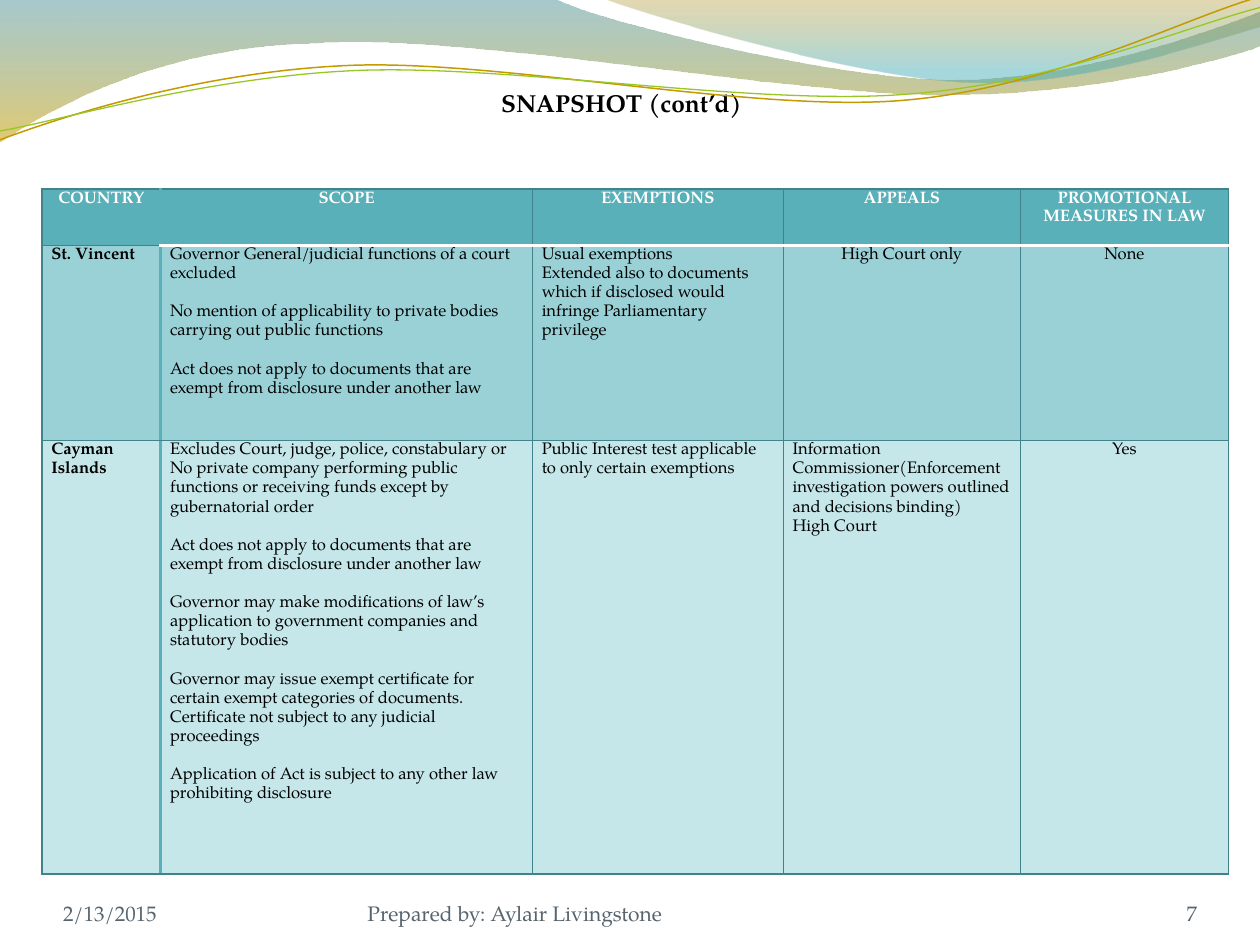
from lxml.etree import SubElement
from pptx import Presentation
from pptx.dml.color import RGBColor
from pptx.enum.text import MSO_ANCHOR, MSO_AUTO_SIZE, PP_ALIGN
from pptx.oxml.ns import qn
from pptx.util import Inches, Pt

COLORS = {
    "text": "000000", "white": "FFFFFF", "footer": "57646E",
    "border": "41838A", "header": "59B0B9", "dark row": "9AD1D7", "light row": "C5E7EA",
    "teal": "3B8890", "gold": "C99E00", "olive": "A48100", "aqua": "3EA9B4",
    "gold line": "C49A00", "green line": "98C723",
}
LEFT, CENTER, RIGHT = PP_ALIGN.LEFT, PP_ALIGN.CENTER, PP_ALIGN.RIGHT

deck = Presentation()
deck.slide_width, deck.slide_height = Inches(10), Inches(7.5)
slide = deck.slides.add_slide(deck.slide_layouts[5])
UNIT = deck.slide_width / 120  # square grid: 120 columns by 90 rows


def write(frame, lines, color, align, font_format, paragraph_format):
    frame.word_wrap = True
    for index, line in enumerate(lines):
        paragraph = frame.paragraphs[0] if index == 0 else frame.add_paragraph()
        paragraph.alignment = align
        for name, value in paragraph_format.items():
            # The first paragraph starts at the top, without a gap
            setattr(paragraph, name, Pt(0) if name == "space_before" and index == 0 else value)
        run = paragraph.add_run()
        run.text = line
        run.font.name = "TeX Gyre Pagella"
        run.font.color.rgb = RGBColor.from_string(COLORS[color])
        for name, value in font_format.items():
            setattr(run.font, name, value)


def trace(start, segments, close):
    """Outline in inches: two numbers are a line, six a cubic Bézier curve."""
    points = [pair for s in segments for pair in zip(s[::2], s[1::2])]
    builder = slide.shapes.build_freeform(*[round(v * 1000) for v in start], scale=914.4)
    builder.add_line_segments([(round(x * 1000), round(y * 1000)) for x, y in points], close)
    outline = builder.convert_to_shape()
    outline.shadow.inherit = False
    # Join the three points of each curve into one curve command
    steps = iter(list(outline.element.iter(qn("a:lnTo"))))
    for segment in segments:
        first = next(steps)
        if len(segment) == 6:
            first.tag = qn("a:cubicBezTo")
            for _ in range(2):
                step = next(steps)
                first.append(step[0])
                step.getparent().remove(step)
    return outline


# Translucent waves: start, segments, gradient stops (position, colour, opacity %)
waves = [
    ((0, 0), [(4.4, -0.01), (4.76, 0.17, 6.64, 0.63, 7.58, 0.63),
              (8.53, 0.63, 9.58, 0.26, 10, 0.09), (10.01, 0.36),
              (9.83, 0.44, 8.7, 0.76, 7.46, 0.75), (6.22, 0.75, 3.82, 0.28, 2.57, 0.34),
              (1.29, 0.36, 0.46, 0.83, -0.01, 1.13)],
     [(0, "teal", 45), (1, "gold", 55)]),
    ((4.79, -0.01), [(5.09, 0.11, 6.82, 0.62, 7.69, 0.65),
                     (8.56, 0.69, 9.61, 0.32, 10, 0.21), (10, 0)],
     [(0, "olive", 30), (0.8, "aqua", 45)]),
]
for start, segments, stops in waves:
    wave = trace(start, segments, True)
    wave.line.fill.background()
    wave.fill.gradient()
    wave.fill.gradient_angle = 270
    for stop, (position, color, _) in zip(wave.fill.gradient_stops, stops):
        stop.position = position
        stop.color.rgb = RGBColor.from_string(COLORS[color])
    for tint, (_, _, opacity) in zip(wave.element.iter(qn("a:srgbClr")), stops):
        SubElement(tint, qn("a:alpha"), val=str(opacity * 1000))

# Thin lines over the waves
strands = [
    ("gold line", 0.85, (0, 1.11), [(0.48, 0.93, 1.58, 0.57, 2.77, 0.52),
                                    (3.95, 0.47, 5.93, 0.89, 7.13, 0.8),
                                    (8.33, 0.71, 9.38, 0.15, 9.98, -0.02)]),
    ("green line", 0.75, (0, 1.04), [(0.47, 0.96, 1.64, 0.61, 2.83, 0.56),
                                     (4.03, 0.51, 5.97, 0.84, 7.17, 0.75),
                                     (8.36, 0.67, 9.41, 0.21, 10, 0.06)]),
]
for color, weight, start, segments in strands:
    strand = trace(start, segments, False)
    strand.fill.background()
    strand.line.color.rgb = RGBColor.from_string(COLORS[color])
    strand.line.width = Pt(weight)

# Title
heading = slide.shapes.title
for name, value in {"left": 4.7, "top": 7.8, "width": 109, "height": 6}.items():
    setattr(heading, name, round(value * UNIT))
for name, value in {"margin_left": 0, "margin_right": 0, "margin_top": Inches(0.05),
                    "margin_bottom": 0, "vertical_anchor": MSO_ANCHOR.TOP,
                    "auto_size": MSO_AUTO_SIZE.NONE}.items():
    setattr(heading.text_frame, name, value)
write(heading.text_frame, ["SNAPSHOT (cont’d)"], "text", CENTER,
      {"size": Pt(14), "bold": True}, {"space_before": Pt(0)})

# Footer: date, author, page number
for left, width, wording, align in [(6, 28, "2/13/2015", LEFT),
                                    (35, 44, "Prepared by: Aylair Livingstone", LEFT),
                                    (104, 10, "7", RIGHT)]:
    footer = slide.shapes.add_textbox(*[round(v * UNIT) for v in (left, 83.4, width, 4.8)])
    for name, value in {"margin_left": 0, "margin_right": 0, "margin_top": 0,
                        "margin_bottom": 0, "vertical_anchor": MSO_ANCHOR.BOTTOM}.items():
        setattr(footer.text_frame, name, value)
    write(footer.text_frame, [wording], "footer", align, {"size": Pt(12)}, {})

# Country table: each cell is a list of paragraphs
other_law = "Act does not apply to documents that are exempt from disclosure under another law"
countries = [
    [["COUNTRY"], ["SCOPE"], ["EXEMPTIONS"], ["APPEALS"], ["PROMOTIONAL MEASURES IN LAW"]],
    [["St. Vincent"],
     ["Governor General/judicial functions of a court excluded",
      "No mention of applicability to private bodies carrying out public functions",
      other_law],
     ["Usual exemptions",
      "Extended also to documents which if disclosed would infringe Parliamentary privilege"],
     ["High Court only"],
     ["None"]],
    [["Cayman Islands"],
     ["Excludes Court, judge, police, constabulary or No private company performing public "
      "functions or receiving funds except by gubernatorial order",
      other_law,
      "Governor may make modifications of law’s application to government companies and "
      "statutory bodies",
      "Governor may issue exempt certificate for certain exempt categories of documents. "
      "Certificate not subject to any judicial proceedings",
      "Application of Act is subject to any other law prohibiting disclosure"],
     ["Public Interest test applicable to only certain exemptions"],
     ["Information Commissioner(Enforcement investigation powers outlined and decisions binding)",
      "High Court"],
     ["Yes"]],
]
column_widths = [11.3, 35.4, 23.9, 22.6, 19.8]
row_heights = [5.35, 18.6, 41.3]
row_fills = ["header", "dark row", "light row"]
snapshot = slide.shapes.add_table(
    len(row_heights), len(column_widths),
    *[round(v * UNIT) for v in (4, 18, sum(column_widths), sum(row_heights))]).table
snapshot.first_row = snapshot.horz_banding = False
for column, width in zip(snapshot.columns, column_widths):
    column.width = round(width * UNIT)
for row, height in zip(snapshot.rows, row_heights):
    row.height = round(height * UNIT)

for r, country in enumerate(countries):
    for c, lines in enumerate(country):
        cell = snapshot.cell(r, c)
        for name, value in {"margin_left": Pt(5.4), "margin_right": Pt(5.4),
                            "margin_top": 0, "margin_bottom": 0,
                            "vertical_anchor": MSO_ANCHOR.TOP}.items():
            setattr(cell, name, value)
        centered = r == 0 or (c > 2 and len(lines) == 1)
        write(cell.text_frame, lines, "white" if r == 0 else "text",
              CENTER if centered else LEFT,
              {"size": Pt(9.5), "bold": r == 0 or c == 0},
              {"line_spacing": 1.15, "space_before": Pt(11 if c == 1 else 0)})

        # Thick white rule under the header, thick teal rule after the country
        thick = {"lnL": c == 1 and "header", "lnR": c == 0 and "header",
                 "lnT": r == 1 and c > 0 and "white", "lnB": r == 0 and c > 0 and "white"}
        properties = cell._tc.get_or_add_tcPr()
        for side, color in thick.items():
            edge = SubElement(properties, qn(f"a:{side}"), w=str(Pt(2 if color else 0.75)))
            paint = SubElement(edge, qn("a:solidFill"))
            SubElement(paint, qn("a:srgbClr"), val=COLORS[color or "border"])
        cell.fill.solid()
        cell.fill.fore_color.rgb = RGBColor.from_string(COLORS[row_fills[r]])

deck.save("out.pptx")
